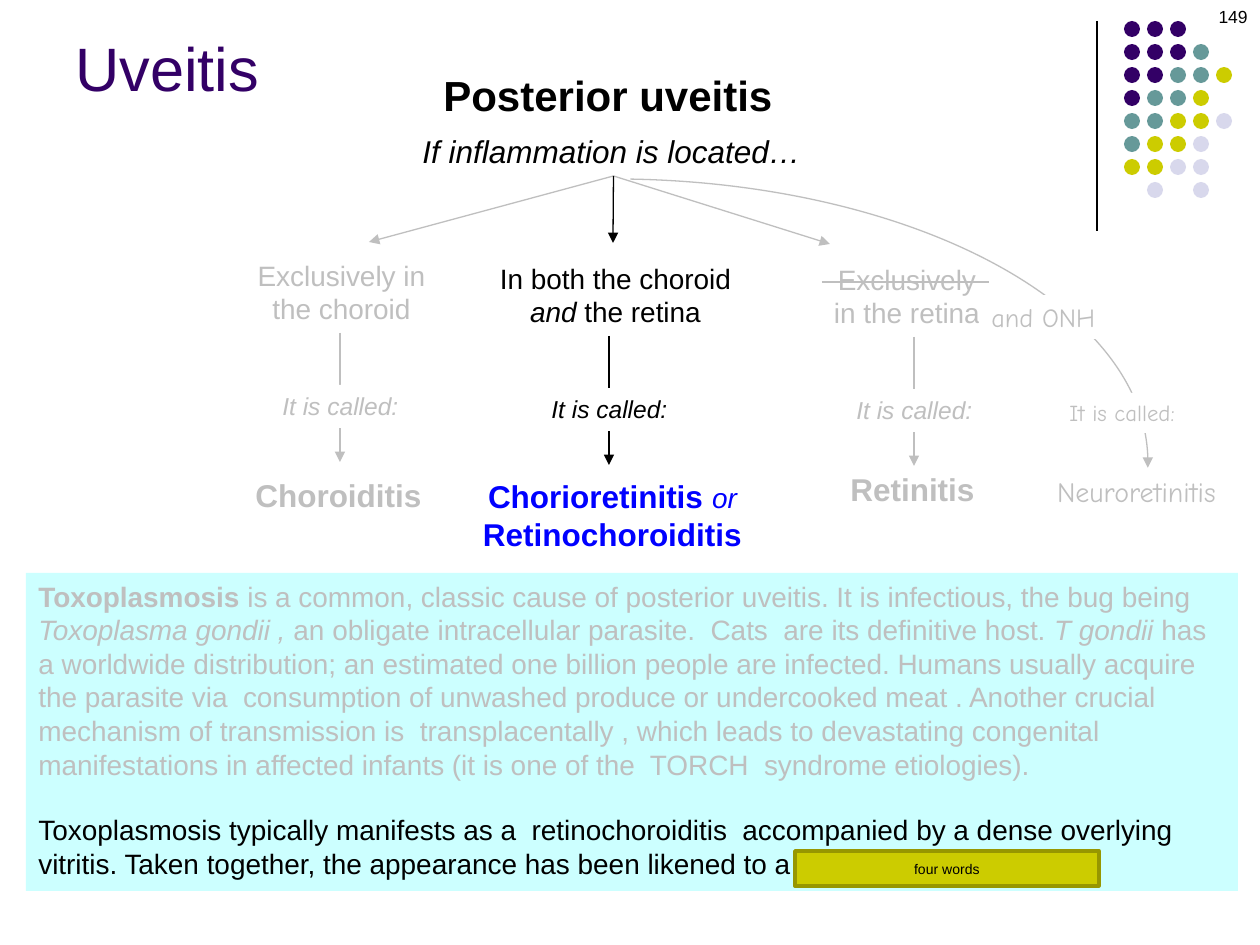
from lxml import etree
from pptx import Presentation
from pptx.dml.color import RGBColor
from pptx.enum.shapes import MSO_CONNECTOR, MSO_SHAPE
from pptx.enum.text import MSO_ANCHOR, MSO_AUTO_SIZE, PP_ALIGN
from pptx.oxml.ns import qn
from pptx.util import Emu, Pt

LEFT, CENTER, RIGHT = PP_ALIGN.LEFT, PP_ALIGN.CENTER, PP_ALIGN.RIGHT
RECT, OVAL, ARC = MSO_SHAPE.RECTANGLE, MSO_SHAPE.OVAL, MSO_SHAPE.ARC
STRAIGHT = MSO_CONNECTOR.STRAIGHT
BOTTOM = 2
SANS, HAND = "Arial", "Comic Neue"
BLACK, GREY, WHITE, BLUE = "000000", "BFBFBF", "FFFFFF", "0000FF"
PURPLE, TEAL, OLIVE, LILAC = "330066", "669999", "CCCC00", "D8D8EC"
PANEL, OLIVE_EDGE = "CCFFFF", "979700"


def px(length):
    return Emu(round(length * 914400 / 126))


def rgb(value):
    return RGBColor.from_string(value)


def add_shape(slide, kind, box, fill=None, edge=None, width=0.75):
    shape = slide.shapes.add_shape(kind, *map(px, box))
    shape.shadow.inherit = False
    if fill:
        shape.fill.solid()
        shape.fill.fore_color.rgb = rgb(fill)
    else:
        shape.fill.background()
    if edge:
        shape.line.color.rgb = rgb(edge)
        shape.line.width = Pt(width)
    else:
        shape.line.fill.background()
    return shape


def write(shape, paragraphs, size, color=BLACK, font=SANS, align=LEFT,
          wrap=False, grow=True, anchor=MSO_ANCHOR.TOP):
    """Each paragraph is a list of (text, style) runs; style holds b, i or a size."""
    frame = shape.text_frame
    frame.word_wrap = wrap
    frame.auto_size = MSO_AUTO_SIZE.SHAPE_TO_FIT_TEXT if grow else MSO_AUTO_SIZE.NONE
    frame.vertical_anchor = anchor
    for index, runs in enumerate(paragraphs):
        paragraph = frame.add_paragraph() if index else frame.paragraphs[0]
        paragraph.alignment = align
        for text, style in runs:
            run = paragraph.add_run()
            run.text = text
            run.font.name = font
            run.font.size = Pt(style.get("size", size))
            run.font.bold = style.get("b", False)
            run.font.italic = style.get("i", False)
            run.font.color.rgb = rgb(style.get("color", color))
    return shape


def label(slide, box, paragraphs, size, fill=None, **options):
    """Text box, or a filled rectangle when a fill is given."""
    if fill:
        holder = add_shape(slide, RECT, box, fill)
    else:
        holder = slide.shapes.add_textbox(*map(px, box))
    return write(holder, paragraphs, size, **options)


def add_arrowhead(line):
    etree.SubElement(line.line._get_or_add_ln(), qn("a:tailEnd"), type="triangle")


def add_line(slide, start, end, color, arrow=True):
    line = slide.shapes.add_connector(STRAIGHT, *map(px, (*start, *end)))
    line.line.color.rgb = rgb(color)
    line.line.width = Pt(0.75)
    if arrow:
        add_arrowhead(line)
    etree.SubElement(line._element.spPr, qn("a:effectLst"))
    return line


def draw_dots(slide, left, top):
    colors = {"P": PURPLE, "T": TEAL, "O": OLIVE, "L": LILAC}
    rows = ("PPP", "PPPT", "PPTTO", "PTTO", "TTOOL", "TOOL", "OOLL", " L L")
    add_line(slide, (left - 27, top), (left - 27, top + 210), BLACK, arrow=False)
    for row, marks in enumerate(rows):
        for column, mark in enumerate(marks):
            if mark in colors:
                add_shape(slide, OVAL, (left + 23 * column, top + 23 * row, 16, 16),
                          colors[mark])


def draw_header(slide, left, top):
    label(slide, (left, top, 358, 63), [[("Posterior uveitis", {"b": True})]], 24)
    cue = label(slide, (left - 21, top + 63, 407, 50),
                [[("If inflammation is located…", {"i": True})]], 18)
    for tip, color in (((369, 242), GREY), ((830, 244), GREY), ((613, 243), BLACK)):
        add_line(slide, (613, 176), tip, color).begin_connect(cue, BOTTOM)


def draw_branch(slide, box, rail, site, diagnosis, diagnosis_box, color, accent):
    """Site, arrow and diagnosis; rail and diagnosis_box are offsets from box."""
    left, top, width, height = box
    dx, dy, diagnosis_width, diagnosis_height = diagnosis_box
    label(slide, box, [site], 16, color=color, align=CENTER, wrap=True)
    x = left + rail
    add_line(slide, (x, top + 81), (x, top + 210), color)
    label(slide, (x - 70, top + 133, 142, 43), [[("It is called:", {"i": True})]],
          14, fill=WHITE, color=color)
    name = label(slide, (left + dx, top + dy, diagnosis_width, diagnosis_height),
                 diagnosis, 18, color=accent, align=CENTER)
    if diagnosis_height < 50:
        name.text_frame.paragraphs[0].line_spacing = Pt(18)


def draw_neuroretinitis(slide, left, top):
    arc = add_shape(slide, ARC, (left - 939, top - 116, 1070, 567), edge=GREY)
    arc.adjustments[0], arc.adjustments[1] = 164.12, 0.34
    add_arrowhead(arc)
    style = {"color": GREY, "font": HAND}
    label(slide, (left + 40, top + 98, 163, 40), [[("It is called:", {})]], 13,
          fill=WHITE, **style)
    name = label(slide, (left, top + 175, 239, 45), [[("Neuroretinitis", {})]], 16,
                 align=CENTER, **style)
    name.text_frame.paragraphs[0].line_spacing = Pt(18)
    label(slide, (left - 38, top, 158, 44), [[("and ONH", {})]], 15,
          fill=WHITE, **style)
    add_line(slide, (left - 195, top - 13), (left - 28, top - 13), GREY, arrow=False)


def draw_toxoplasmosis(slide, left, top):
    bold, italic, plain = {"b": True}, {"i": True}, {}
    cause = [
        ("Toxoplasmosis ", bold),
        ("is a common, classic cause of posterior uveitis. It is infectious, "
         "the bug being ", plain),
        ("Toxoplasma gondii ,", italic),
        (" an obligate intracellular parasite.  Cats  are its definitive host. ", plain),
        ("T gondii ", italic),
        ("has a worldwide distribution; an estimated one billion people are infected. "
         "Humans usually acquire the parasite via  consumption of unwashed produce or "
         "undercooked meat . Another crucial mechanism of transmission is  "
         "transplacentally , which leads to devastating congenital manifestations in "
         "affected infants (it is one of the  TORCH  syndrome etiologies).", plain),
    ]
    signs = [("Toxoplasmosis typically manifests as a  retinochoroiditis  accompanied "
              "by a dense overlying vitritis. Taken together, the appearance has been "
              "likened to a", {"color": BLACK})]
    panel = label(slide, (left, top, 1212, 318), [cause, signs], 16, fill=PANEL,
                  color=GREY, wrap=True)
    panel.text_frame.paragraphs[1].space_before = Pt(18.4)
    hint = add_shape(slide, RECT, (left + 769, top + 278, 304, 35), OLIVE, OLIVE_EDGE, 2)
    write(hint, [[("four words", plain)]], 8, align=CENTER, wrap=True, grow=False,
          anchor=MSO_ANCHOR.MIDDLE)


def main():
    deck = Presentation()
    deck.slide_width, deck.slide_height = px(1260), px(945)
    slide = deck.slides.add_slide(deck.slide_layouts[6])
    bold = {"b": True}

    draw_dots(slide, 1124, 21)
    label(slide, (966, 0, 294, 63), [[("149", {})]], 10, align=RIGHT, wrap=True,
          grow=False)
    title = label(slide, (63, 16, 357, 78), [[("Uveitis", {})]], 35, color=PURPLE,
                  wrap=True, grow=False)
    title.text_frame.margin_top = px(14)
    draw_header(slide, 431, 63)
    draw_branch(slide, (242, 252, 199, 81), 98, [("Exclusively in the choroid", {})],
                [[("Choroiditis", bold)]], (0, 218, 193, 50), GREY, GREY)
    draw_branch(slide, (483, 255, 265, 81), 126,
                [("In both the choroid ", {}), ("and", {"i": True}), (" the retina", {})],
                [[("Chorioretinitis ", bold), ("or", {"i": True, "size": 16})],
                 [("Retinochoroiditis", bold)]],
                (-14, 216, 287, 89), BLACK, BLUE)
    draw_branch(slide, (819, 256, 176, 81), 95, [("Exclusively in the retina", {})],
                [[("Retinitis", bold)]], (18, 214, 151, 44), GREY, GREY)
    draw_neuroretinitis(slide, 1017, 295)
    draw_toxoplasmosis(slide, 26, 573)
    deck.save("out.pptx")


if __name__ == "__main__":
    main()
